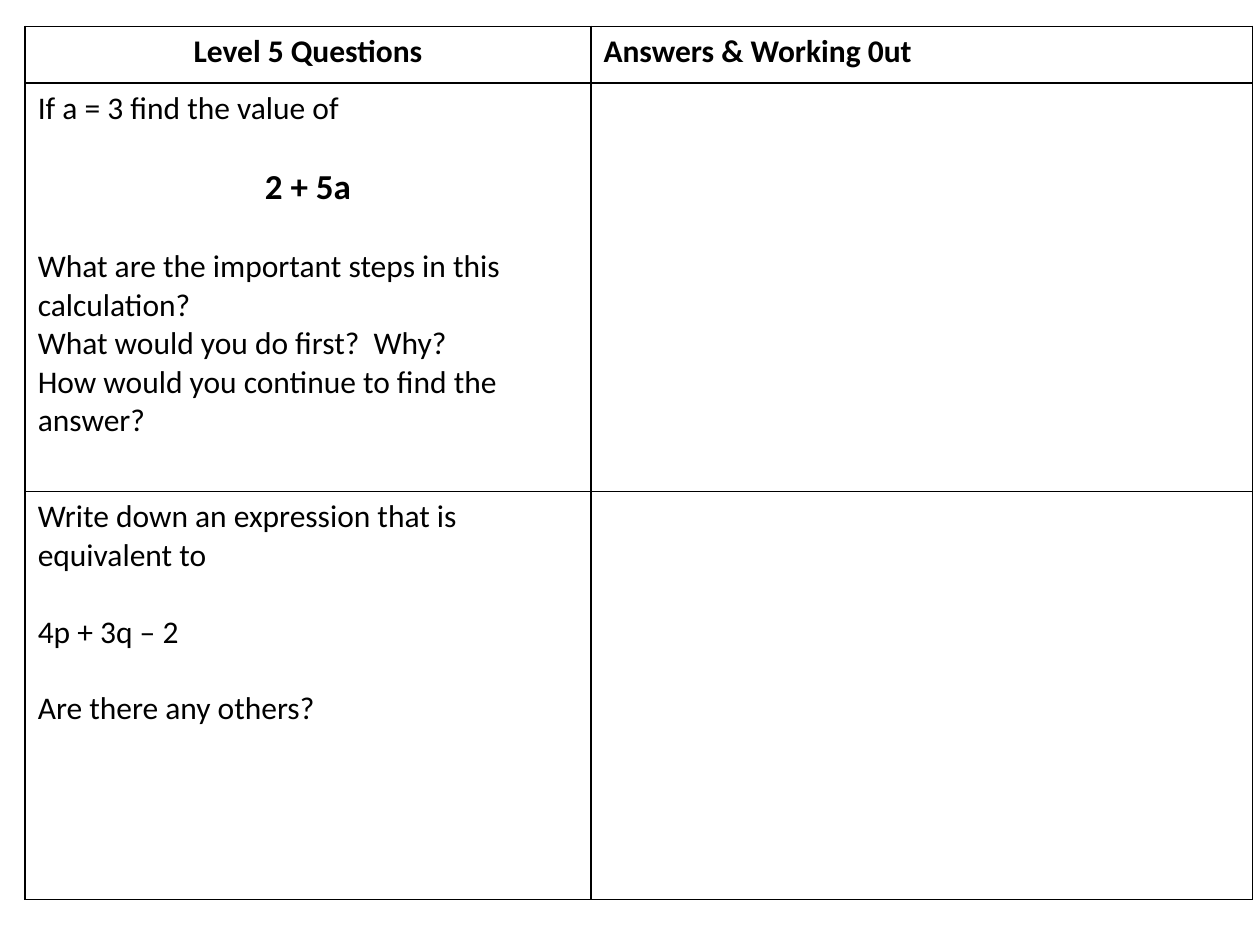
"""Build a worksheet slide with algebra questions and space for answers."""
from dataclasses import dataclass

from lxml.etree import SubElement
from pptx import Presentation
from pptx.dml.color import RGBColor as RGB
from pptx.enum.text import PP_ALIGN as Align
from pptx.oxml.ns import qn
from pptx.table import _Cell as Cell
from pptx.util import Inches, Pt

COLORS = {"ink": "000000", "paper": "FFFFFF"}
FONT = "Calibri"
GRID_COLS, GRID_ROWS = 100, 75
LEFT, TOP = 2, 2.1
COL_SPANS = (44.9, 52.5)
ROW_SPANS = (4.5, 32.4, 32.4)
GAP = 22


@dataclass(frozen=True)
class Line:
    text: str
    size: int = 18
    bold: bool = False
    align: Align = Align.LEFT
    before: int = 0


HEADERS = (
    Line("Level 5 Questions", bold=True, align=Align.CENTER),
    Line("Answers & Working 0ut", bold=True),
)
QUESTIONS = (
    (
        Line("If a = 3 find the value of"),
        Line("2 + 5a", size=20, bold=True, align=Align.CENTER, before=GAP),
        Line("What are the important steps in this calculation?", before=GAP),
        Line("What would you do first?  Why?"),
        Line("How would you continue to find the answer?"),
    ),
    (
        Line("Write down an expression that is equivalent to"),
        Line("4p + 3q – 2", before=GAP),
        Line("Are there any others?", before=GAP),
    ),
)
ROWS = [[(h,) for h in HEADERS]] + [[q, ()] for q in QUESTIONS]


def write(p, text: str, *, size: int, bold: bool, align: Align, before: int) -> None:
    p.alignment = align
    p.space_before = Pt(before)
    r = p.add_run()
    r.text = text
    r.font.name, r.font.size, r.font.bold = FONT, Pt(size), bold
    r.font.color.rgb = RGB.from_string(COLORS["ink"])


def style_cell(cell: Cell) -> None:
    tc_pr = cell._tc.get_or_add_tcPr()
    for side in "LRTB":
        ln = SubElement(tc_pr, qn(f"a:ln{side}"), w=str(Pt(1)))
        fill = SubElement(ln, qn("a:solidFill"))
        SubElement(fill, qn("a:srgbClr"), val=COLORS["ink"])
    cell.fill.solid()
    cell.fill.fore_color.rgb = RGB.from_string(COLORS["paper"])


def fill_cell(cell: Cell, lines: tuple[Line, ...]) -> None:
    style_cell(cell)
    tf = cell.text_frame
    for i, line in enumerate(lines):
        p = tf.add_paragraph() if i else tf.paragraphs[0]
        write(p, line.text, size=line.size, bold=line.bold,
              align=line.align, before=line.before)


def main() -> None:
    prs = Presentation()
    prs.slide_width, prs.slide_height = Inches(10), Inches(7.5)
    s = prs.slides.add_slide(prs.slide_layouts[6])

    def x(cols: float) -> int:
        return round(prs.slide_width * cols / GRID_COLS)

    def y(rows: float) -> int:
        return round(prs.slide_height * rows / GRID_ROWS)

    table = s.shapes.add_table(
        len(ROWS), len(COL_SPANS), x(LEFT), y(TOP),
        x(sum(COL_SPANS)), y(sum(ROW_SPANS))).table
    table.first_row = table.horz_banding = False
    for col, span in zip(table.columns, COL_SPANS):
        col.width = x(span)
    for row, span, contents in zip(table.rows, ROW_SPANS, ROWS):
        row.height = y(span)
        for cell, lines in zip(row.cells, contents):
            fill_cell(cell, lines)
    prs.save("out.pptx")


if __name__ == "__main__":
    main()
